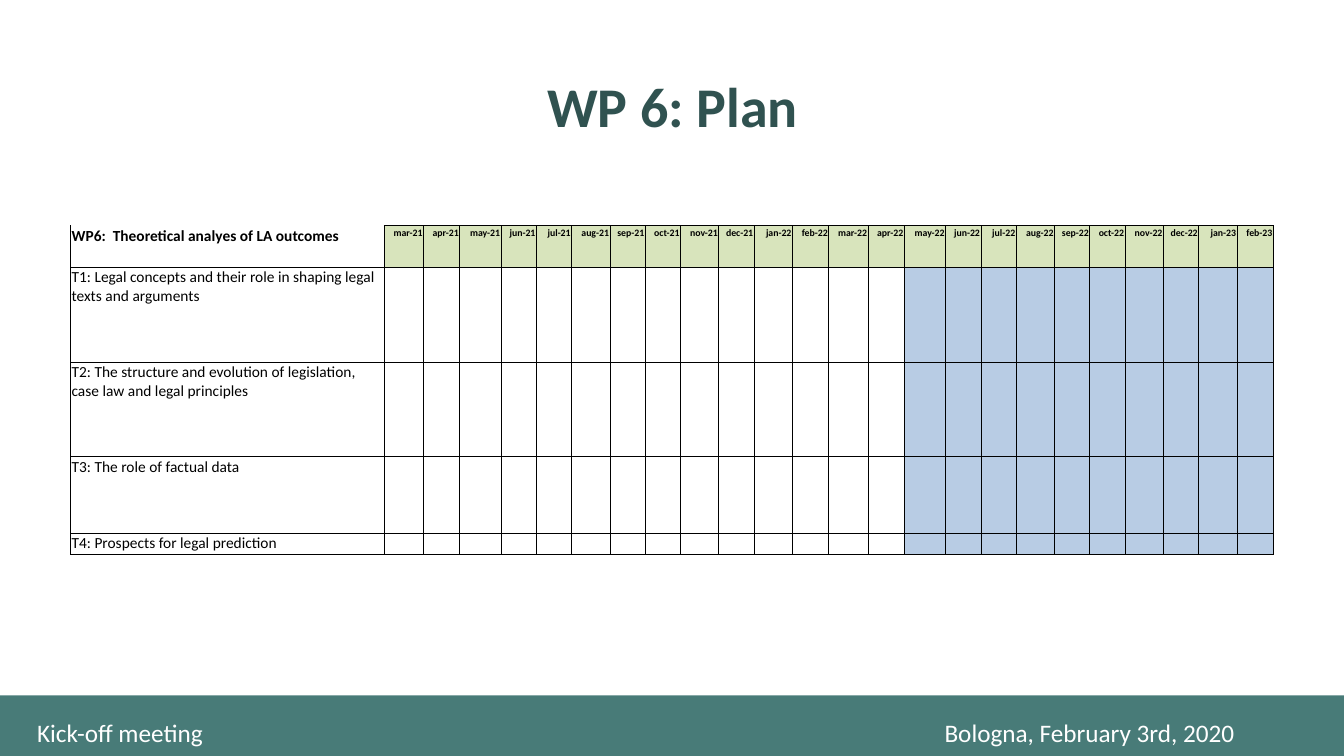
from dataclasses import dataclass

from lxml.etree import SubElement
from pptx import Presentation
from pptx.dml.color import RGBColor
from pptx.enum.shapes import MSO_SHAPE
from pptx.enum.text import MSO_ANCHOR, PP_ALIGN
from pptx.oxml.ns import qn
from pptx.util import Inches, Pt


@dataclass(frozen=True)
class Theme:
    font: str = "Calibri"
    title: str = "305250"
    footer: str = "487B78"
    white: str = "FFFFFF"
    black: str = "000000"
    month: str = "D8E4BC"
    active: str = "B8CCE4"
    title_size: float = 40
    footer_size: float = 18
    task_size: float = 11
    month_size: float = 7
    border: float = 0.5


THEME = Theme()

MONTH_WIDTHS = {
    "mar": 0.39, "apr": 0.36, "may": 0.41, "jun": 0.35, "jul": 0.35, "aug": 0.38,
    "sep": 0.35, "oct": 0.35, "nov": 0.38, "dec": 0.35, "jan": 0.38, "feb": 0.36,
}
FIRST_YEAR = 21
YEARS = 2
FIRST_ACTIVE = "may-22"
HEADING = "WP6:  Theoretical analyes of LA outcomes"
HEADING_HEIGHT = 0.41
TASK_WIDTH = 3.11
TASKS = [
    ("T1: Legal concepts and their role in shaping legal texts and arguments", 0.94),
    ("T2: The structure and evolution of legislation, case law and legal principles", 0.94),
    ("T3: The role of factual data", 0.76),
    ("T4: Prospects for legal prediction", 0.21),
]


def color(value):
    return RGBColor.from_string(value)


def write(frame, text, *, size, ink=THEME.black, bold=False, align=PP_ALIGN.LEFT, spacing=None):
    frame.word_wrap = True
    para = frame.paragraphs[0]
    para.alignment = align
    if spacing:
        para.line_spacing = spacing
    span = para.add_run()
    span.text = text
    span.font.name = THEME.font
    span.font.size = Pt(size)
    span.font.bold = bold
    span.font.color.rgb = color(ink)
    return para


def add_title(page, text):
    title = page.shapes.title
    title.left, title.top = Inches(0.92), Inches(0.65)
    title.width, title.height = Inches(11.5), Inches(0.88)
    title.text_frame.vertical_anchor = MSO_ANCHOR.MIDDLE
    write(title.text_frame, text, size=THEME.title_size, ink=THEME.title,
          bold=True, align=PP_ALIGN.CENTER, spacing=0.9)


def add_footer(page, event, place_and_date):
    band = page.shapes.add_shape(
        MSO_SHAPE.RECTANGLE, 0, Inches(6.9), Inches(13.33), Inches(0.6))
    band.shadow.inherit = False
    band.fill.solid()
    band.fill.fore_color.rgb = color(THEME.footer)
    band.line.fill.background()

    box = page.shapes.add_textbox(Inches(0.27), Inches(7.07), Inches(13.06), Inches(0.4))
    para = write(box.text_frame, f"{event}\t{place_and_date}",
                 size=THEME.footer_size, ink=THEME.white)
    tabs = SubElement(para._p.get_or_add_pPr(), qn("a:tabLst"))
    SubElement(tabs, qn("a:tab"), pos=str(Inches(9)), algn="l")


def add_borders(cell, sides):
    properties = cell._tc.get_or_add_tcPr()
    for side in sides:
        line = SubElement(properties, qn(f"a:ln{side}"), w=str(Pt(THEME.border)))
        fill = SubElement(line, qn("a:solidFill"))
        SubElement(fill, qn("a:srgbClr"), val=THEME.black)


def format_cell(cell, *, fill=None, sides="LRTB"):
    cell.margin_left = cell.margin_right = cell.margin_top = Inches(0.01)
    cell.margin_bottom = 0
    add_borders(cell, sides)
    if fill:
        cell.fill.solid()
        cell.fill.fore_color.rgb = color(fill)
    else:
        cell.fill.background()


def shrink_empty(cell):
    """Keep the default type size of an empty cell from stretching its row."""
    SubElement(cell.text_frame.paragraphs[0]._p, qn("a:endParaRPr"),
               sz=str(round(THEME.month_size * 100)))


def add_plan(page):
    months = [f"{name}-{FIRST_YEAR + year + (name in ('jan', 'feb'))}"
              for year in range(YEARS) for name in MONTH_WIDTHS]
    widths = [TASK_WIDTH, *list(MONTH_WIDTHS.values()) * YEARS]
    heights = [HEADING_HEIGHT, *(height for _, height in TASKS)]
    first_active = months.index(FIRST_ACTIVE) + 1

    plan = page.shapes.add_table(
        len(heights), len(widths), Inches(0.7), Inches(2.24),
        Inches(sum(widths)), Inches(sum(heights))).table
    plan.first_row = plan.horz_banding = False
    for column, width in zip(plan.columns, widths):
        column.width = Inches(width)
    for row, height in zip(plan.rows, heights):
        row.height = Inches(height)

    corner = plan.cell(0, 0)
    format_cell(corner, sides="LRB")
    write(corner.text_frame, HEADING, size=THEME.task_size, bold=True)
    for column, month in enumerate(months, 1):
        cell = plan.cell(0, column)
        format_cell(cell, fill=THEME.month)
        write(cell.text_frame, month, size=THEME.month_size, bold=True, align=PP_ALIGN.RIGHT)

    for row, (task, _) in enumerate(TASKS, 1):
        label = plan.cell(row, 0)
        format_cell(label)
        write(label.text_frame, task, size=THEME.task_size)
        for column in range(1, len(widths)):
            cell = plan.cell(row, column)
            format_cell(cell, fill=THEME.active if column >= first_active else None)
            shrink_empty(cell)


def main():
    deck = Presentation()
    deck.slide_width, deck.slide_height = Inches(13.33), Inches(7.5)
    page = deck.slides.add_slide(deck.slide_layouts[5])
    add_footer(page, "Kick-off meeting", "Bologna, February 3rd, 2020")
    add_title(page, "WP 6: Plan")
    add_plan(page)
    deck.save("out.pptx")


if __name__ == "__main__":
    main()
